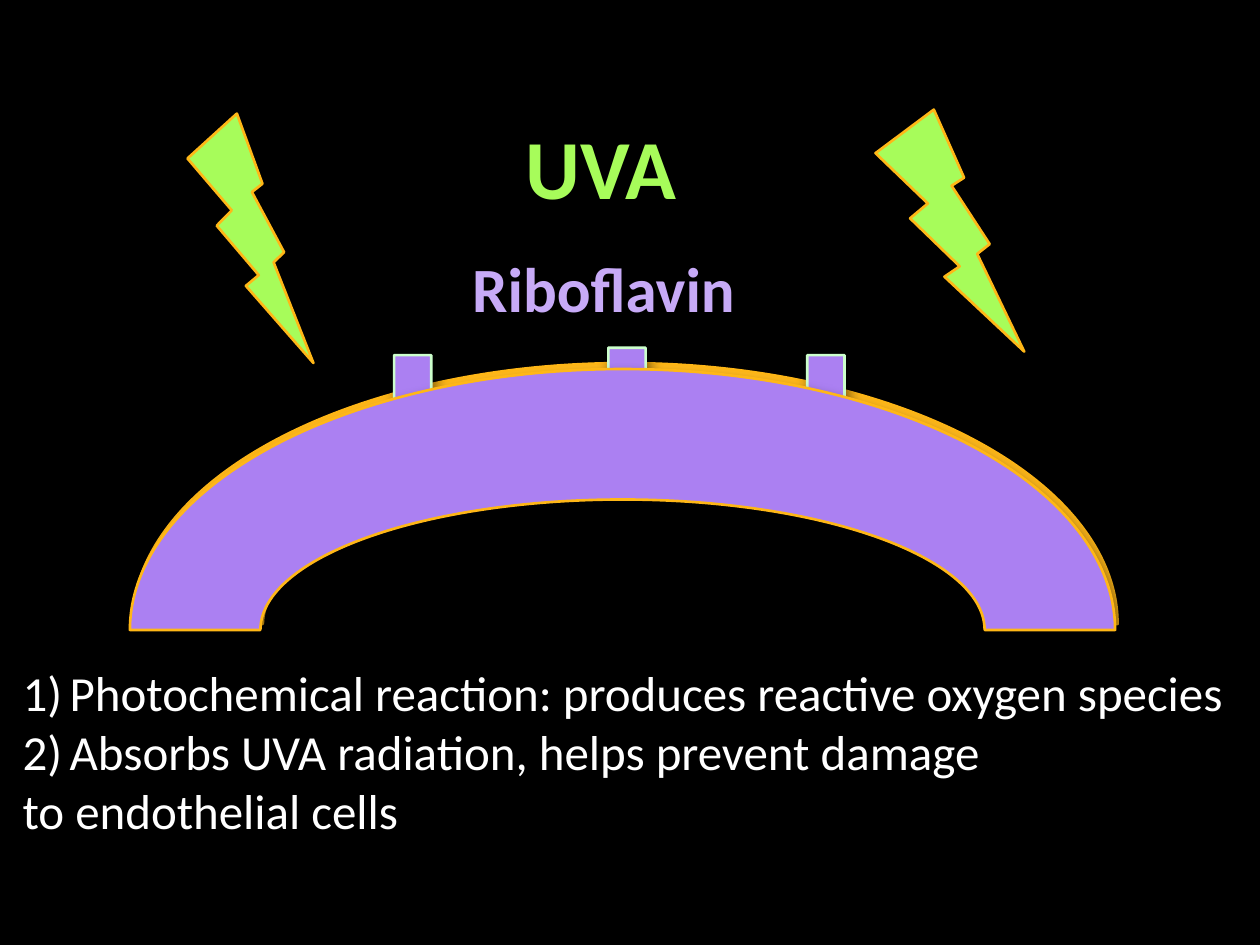
import dataclasses

import lxml.etree
import pptx
import pptx.dml.color
import pptx.enum.shapes
import pptx.enum.text
import pptx.oxml.ns
import pptx.util

Cm = pptx.util.Cm
Pt = pptx.util.Pt
RGB = pptx.dml.color.RGBColor
SHAPE = pptx.enum.shapes.MSO_SHAPE
qn = pptx.oxml.ns.qn

BLACK = RGB(0x00, 0x00, 0x00)
WHITE = RGB(0xFF, 0xFF, 0xFF)
ORANGE = RGB(0xFF, 0xB9, 0x1D)
OUTLINE = RGB(0xFF, 0xB7, 0x17)
PURPLE = RGB(0xAB, 0x80, 0xF2)
LILAC = RGB(0xC7, 0xAA, 0xF7)
GREEN = RGB(0xA7, 0xFC, 0x5A)
MINT = RGB(0xCC, 0xFF, 0xCC)


@dataclasses.dataclass
class Figure:
    kind: pptx.enum.shapes.MSO_SHAPE
    left: float
    top: float
    width: float
    height: float
    fill: RGB
    line: RGB = OUTLINE


def add_shadow(sp) -> None:
    sp.shadow.inherit = False
    effects = sp._element.spPr.find(qn("a:effectLst"))
    shadow = lxml.etree.SubElement(
        effects, qn("a:outerShdw"), blurRad=str(Pt(8)), dist=str(Pt(5)),
        dir=str(70 * 60000), rotWithShape="0")
    color = lxml.etree.SubElement(shadow, qn("a:srgbClr"), val=str(BLACK))
    lxml.etree.SubElement(color, qn("a:alpha"), val="50000")


def draw(s, fig: Figure) -> None:
    box = (Cm(v) for v in (fig.left, fig.top, fig.width, fig.height))
    sp = s.shapes.add_shape(fig.kind, *box)
    sp.fill.solid()
    sp.fill.fore_color.rgb = fig.fill
    sp.line.color.rgb = fig.line
    sp.line.width = Pt(1.5)
    add_shadow(sp)


def write(sp, box: tuple, lines: list[str], size: int, color: RGB,
          bold: bool = False, wrap: bool = True) -> None:
    sp.left, sp.top, sp.width, sp.height = (Cm(v) for v in box)
    tf = sp.text_frame
    frame_format = {
        "word_wrap": wrap,
        "auto_size": pptx.enum.text.MSO_AUTO_SIZE.NONE,
        "vertical_anchor": pptx.enum.text.MSO_ANCHOR.TOP,
    }
    for name, value in frame_format.items():
        setattr(tf, name, value)
    for i, line in enumerate(lines):
        p = tf.paragraphs[0] if i == 0 else tf.add_paragraph()
        p.alignment = pptx.enum.text.PP_ALIGN.LEFT
        p.space_before = Pt(0)
        r = p.add_run()
        r.text = line
        font_format = {"name": "Calibri", "size": Pt(size), "bold": bold}
        for name, value in font_format.items():
            setattr(r.font, name, value)
        r.font.color.rgb = color


def number(p, numbered: bool) -> None:
    pPr = p._p.get_or_add_pPr()
    pPr.set("marL", str(Cm(0.95)))
    pPr.set("indent", str(Cm(-0.95)))
    if numbered:
        lxml.etree.SubElement(pPr, qn("a:buFont"), typeface="+mj-lt")
        lxml.etree.SubElement(pPr, qn("a:buAutoNum"), type="arabicParenR")
    else:
        lxml.etree.SubElement(pPr, qn("a:buNone"))


def main() -> None:
    prs = pptx.Presentation()
    prs.slide_width, prs.slide_height = Cm(25.4), Cm(19.05)
    s = prs.slides.add_slide(prs.slide_layouts[1])
    s.background.fill.solid()
    s.background.fill.fore_color.rgb = BLACK

    # Cornea with riboflavin arrows going in behind its front layer
    arc = (19.86, 10.52)
    draw(s, Figure(SHAPE.BLOCK_ARC, 2.67, 7.32, *arc, ORANGE))
    for left, top in ((7.57, 7.16), (11.89, 7.01), (15.9, 7.16)):
        draw(s, Figure(SHAPE.DOWN_ARROW, left, top, 1.5, 2.72, PURPLE, MINT))
    draw(s, Figure(SHAPE.BLOCK_ARC, 2.62, 7.44, *arc, PURPLE))

    # UVA light
    for box in ((3.78, 2.29, 2.54, 5.03), (17.65, 2.21, 3, 4.88)):
        draw(s, Figure(SHAPE.LIGHTNING_BOLT, *box, GREEN))

    # Labels
    write(s.shapes.title, (10.34, 2.21, 4.27, 2.31), ["UVA"], 48, GREEN,
          bold=True, wrap=False)
    label = s.shapes.add_textbox(0, 0, 0, 0)
    write(label, (9.27, 4.9, 8.33, 1.8), ["Riboflavin"], 36, LILAC, bold=True)

    # Numbered effects, the last line continuing the second item
    body = s.placeholders[1]
    write(body, (0.2, 13.23, 29.16, 3.84), [
        "Photochemical reaction: produces reactive oxygen species",
        "Absorbs UVA radiation, helps prevent damage",
        "to endothelial cells",
    ], 28, WHITE)
    for i, p in enumerate(body.text_frame.paragraphs):
        number(p, numbered=i < 2)

    prs.save("out.pptx")


if __name__ == "__main__":
    main()
